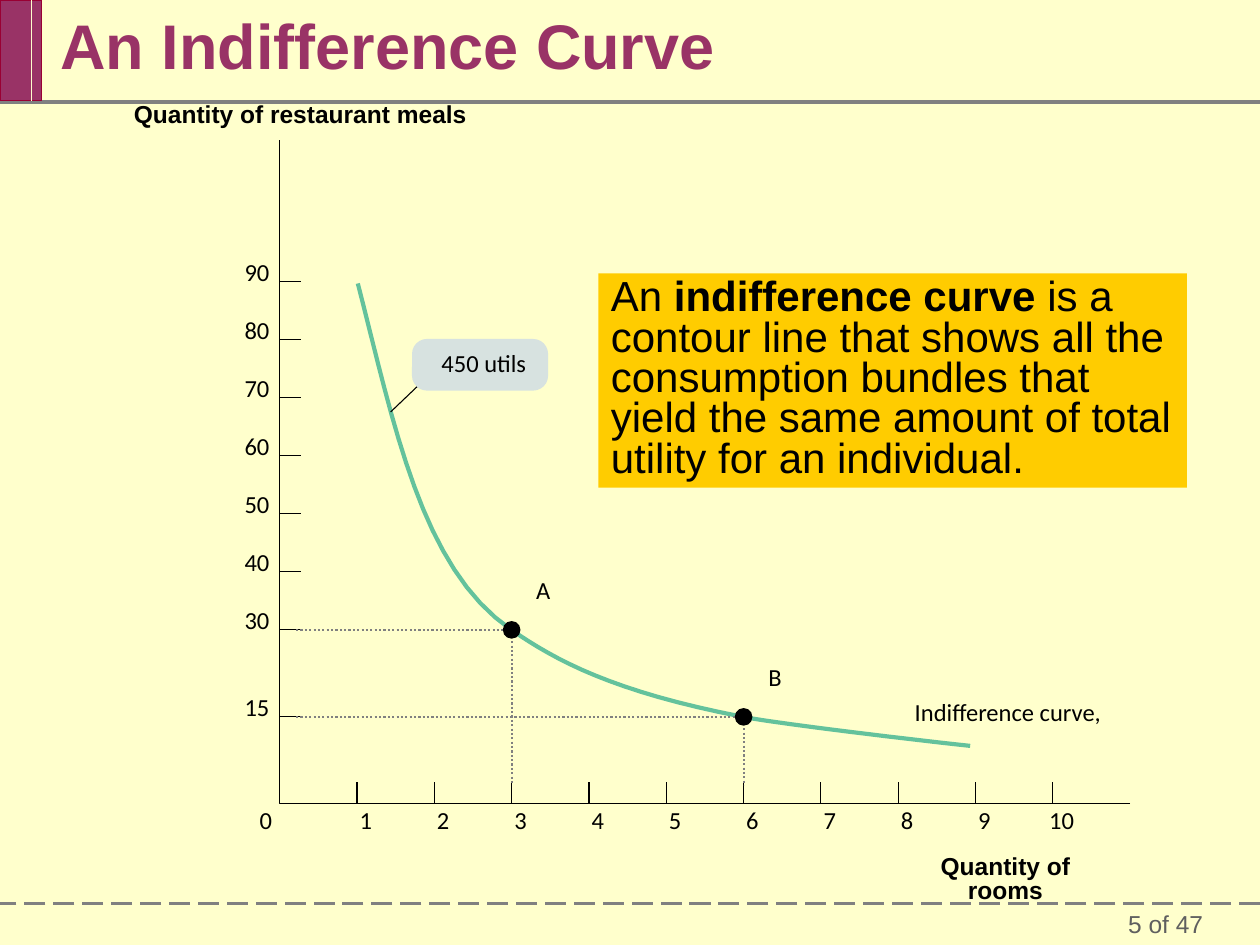
from lxml.etree import SubElement
from pptx import Presentation
from pptx.dml.color import RGBColor
from pptx.enum.dml import MSO_LINE
from pptx.enum.shapes import MSO_CONNECTOR, MSO_SHAPE
from pptx.enum.text import MSO_ANCHOR, MSO_AUTO_SIZE, PP_ALIGN
from pptx.oxml.ns import qn
from pptx.util import Inches, Pt

CURVE = [(0.62, 1.14), (0.91, 2.26), (1.12, 3.4), (1.84, 3.89), (2.19, 4.13),
         (2.64, 4.38), (3.68, 4.58), (3.87, 4.62), (4.83, 4.74), (5.48, 4.81)]
X_MAX, Y_MAX = 11, 114.5


def color(value):
    return RGBColor.from_string(value)


def set_fill(sp, value):
    sp.shadow.inherit = False
    sp.fill.solid()
    sp.fill.fore_color.rgb = color(value)
    sp.line.fill.background()


def set_line(line, value, width, dash=None):
    line.color.rgb = color(value)
    line.width = Pt(width)
    if dash:
        line.dash_style = dash


def add_line(s, x1, y1, x2, y2, value="000000", width=0.63, dash=None):
    cxn = s.shapes.add_connector(MSO_CONNECTOR.STRAIGHT, Inches(x1), Inches(y1),
                                 Inches(x2), Inches(y2))
    set_line(cxn.line, value, width, dash)
    SubElement(cxn._element.spPr, qn("a:effectLst"))


def add_shape(s, kind, box, fill):
    sp = s.shapes.add_shape(kind, *map(Inches, box))
    set_fill(sp, fill)
    return sp


def add_path(s, points, value, width):
    points = [(Inches(x), Inches(y)) for x, y in points]
    builder = s.shapes.build_freeform(*points[0], scale=1.0)
    builder.add_line_segments(points[1:], close=False)
    sp = builder.convert_to_shape()
    sp.shadow.inherit = False
    sp.fill.background()
    set_line(sp.line, value, width)


def write(tf, runs, size=14, font="Calibri", value="000000", align=PP_ALIGN.CENTER,
          spacing=0.8, anchor=MSO_ANCHOR.TOP, margins=(0, 0, 0, 0), wrap=True):
    tf.auto_size = MSO_AUTO_SIZE.NONE
    tf.word_wrap = wrap
    tf.vertical_anchor = anchor
    tf.margin_left, tf.margin_top, tf.margin_right, tf.margin_bottom = map(Inches, margins)
    p = tf.paragraphs[0]
    p.alignment = align
    p.line_spacing = spacing
    for text, bold in runs:
        r = p.add_run()
        r.text = text
        r.font.size = Pt(size)
        r.font.name = font
        r.font.bold = bold
        r.font.color.rgb = color(value)


def add_label(s, text, box, bold=False, **style):
    sp = s.shapes.add_textbox(*map(Inches, box))
    write(sp.text_frame, [(text, bold)], **style)


def bezier(points, steps=16):
    curve = [points[0]]
    for i in range(0, len(points) - 1, 3):
        segment = points[i:i + 4]
        for n in range(1, steps + 1):
            t = n / steps
            weights = ((1 - t) ** 3, 3 * t * (1 - t) ** 2, 3 * t * t * (1 - t), t ** 3)
            curve.append(tuple(sum(w * pt[axis] for w, pt in zip(weights, segment))
                               for axis in (0, 1)))
    return curve


def add_header(s, box):
    left, top, width, height = box
    add_line(s, left + width, top + height + 0.01, left, top + height + 0.01, "808080", 2)
    sp = add_shape(s, MSO_SHAPE.RECTANGLE, (left, top, 0.33, height), "993366")
    set_line(sp.line, "990033", 0.75)
    add_line(s, left + 0.25, top, left + 0.25, top + height, "FFFFCC", 0.75)
    title = s.shapes.title
    title.left, title.top = Inches(left + 0.38), Inches(top)
    title.width, title.height = Inches(width - 0.42), Inches(height)
    set_fill(title, "FFFFCC")
    write(title.text_frame, [("An Indifference Curve", True)], 36, "Arial", "993366",
          PP_ALIGN.LEFT, 0.85, MSO_ANCHOR.MIDDLE, (0.1, 0.05, 0.1, 0.05))


def add_footer(s, box):
    left, top, width, height = box
    add_line(s, left + width, top, left, top, "808080", 1.5, MSO_LINE.LONG_DASH)
    add_label(s, "5 of 47", (left + width - 1.5, top, 1.5, height), size=14, font="Arial",
              value="5F5F5F", align=PP_ALIGN.RIGHT, spacing=1.0,
              anchor=MSO_ANCHOR.MIDDLE, margins=(0.1, 0.05, 0.45, 0.05))


def add_definition(s, box):
    sp = add_shape(s, MSO_SHAPE.RECTANGLE, box, "FFCC00")
    runs = [("An ", False), ("indifference curve ", True),
            ("is a contour line that shows all the consumption bundles that yield "
             "the same amount of total utility for an individual.", False)]
    write(sp.text_frame, runs, 24, "Arial", align=PP_ALIGN.LEFT,
          margins=(0.1, 0.05, 0.1, 0.05))


def add_callout(s, box):
    left, top, width, height = box
    add_line(s, left - 0.17, top + 0.58, left + 0.05, top + 0.37)
    sp = add_shape(s, MSO_SHAPE.ROUNDED_RECTANGLE, box, "D7E2E0")
    sp.adjustments[0] = 0.29
    write(sp.text_frame, [("450 utils", False)], margins=(0.06, 0.08, 0, 0))


def add_graph(s, box):
    left, top, width, height = box
    bottom = top + height

    def x_at(rooms):
        return left + rooms * width / X_MAX

    def y_at(meals):
        return bottom - meals * height / Y_MAX

    add_label(s, "Quantity of restaurant meals", (left - 1.97, top - 0.28, 4.27, 0.19),
              True, font="Arial")
    add_label(s, "Quantity of rooms", (left + 5.06, bottom + 0.42, 1.4, 0.38),
              True, font="Arial")
    add_label(s, "Indifference curve,", (left + 5.03, top + 4.47, 1.5, 0.19))
    add_label(s, "0", (left - 0.16, bottom + 0.05, 0.1, 0.18), wrap=False)
    add_path(s, [(left + width, bottom), (left, bottom), (left, top)], "000000", 0.63)
    for rooms in range(1, 11):
        x = x_at(rooms)
        add_line(s, x, bottom - 0.17, x, bottom)
        add_label(s, str(rooms), (x - 0.03, bottom + 0.05, 0.2, 0.18), wrap=False)
    for meals in (15, *range(30, 91, 10)):
        y = y_at(meals)
        add_line(s, left, y, left + 0.17, y)
        add_label(s, str(meals), (left - 0.28, y - 0.15, 0.2, 0.19), wrap=False)

    add_path(s, [(left + x, top + y) for x, y in bezier(CURVE)], "64C29C", 2.38)
    for name, rooms, meals in (("A", 3, 30), ("B", 6, 15)):
        x, y = x_at(rooms), y_at(meals)
        add_line(s, left + 0.13, y, x - 0.06, y, "808080", 1.25, MSO_LINE.ROUND_DOT)
        add_line(s, x, y + 0.09, x, bottom - 0.15, "808080", 1.25, MSO_LINE.ROUND_DOT)
        add_shape(s, MSO_SHAPE.OVAL, (x - 0.07, y - 0.07, 0.14, 0.14), "000000")
        add_label(s, name, (x + 0.19, y - 0.39, 0.12, 0.19), wrap=False)


def main():
    prs = Presentation()
    prs.slide_width, prs.slide_height = Inches(10), Inches(7.5)
    s = prs.slides.add_slide(prs.slide_layouts[5])
    s.background.fill.solid()
    s.background.fill.fore_color.rgb = color("FFFFCC")
    add_header(s, (0, 0, 10, 0.8))
    add_footer(s, (0, 7.17, 10, 0.33))
    add_definition(s, (4.75, 2.17, 4.67, 1.7))
    add_graph(s, (2.22, 1.11, 6.75, 5.27))
    add_callout(s, (3.27, 2.69, 1.08, 0.41))
    prs.save("out.pptx")


if __name__ == "__main__":
    main()
